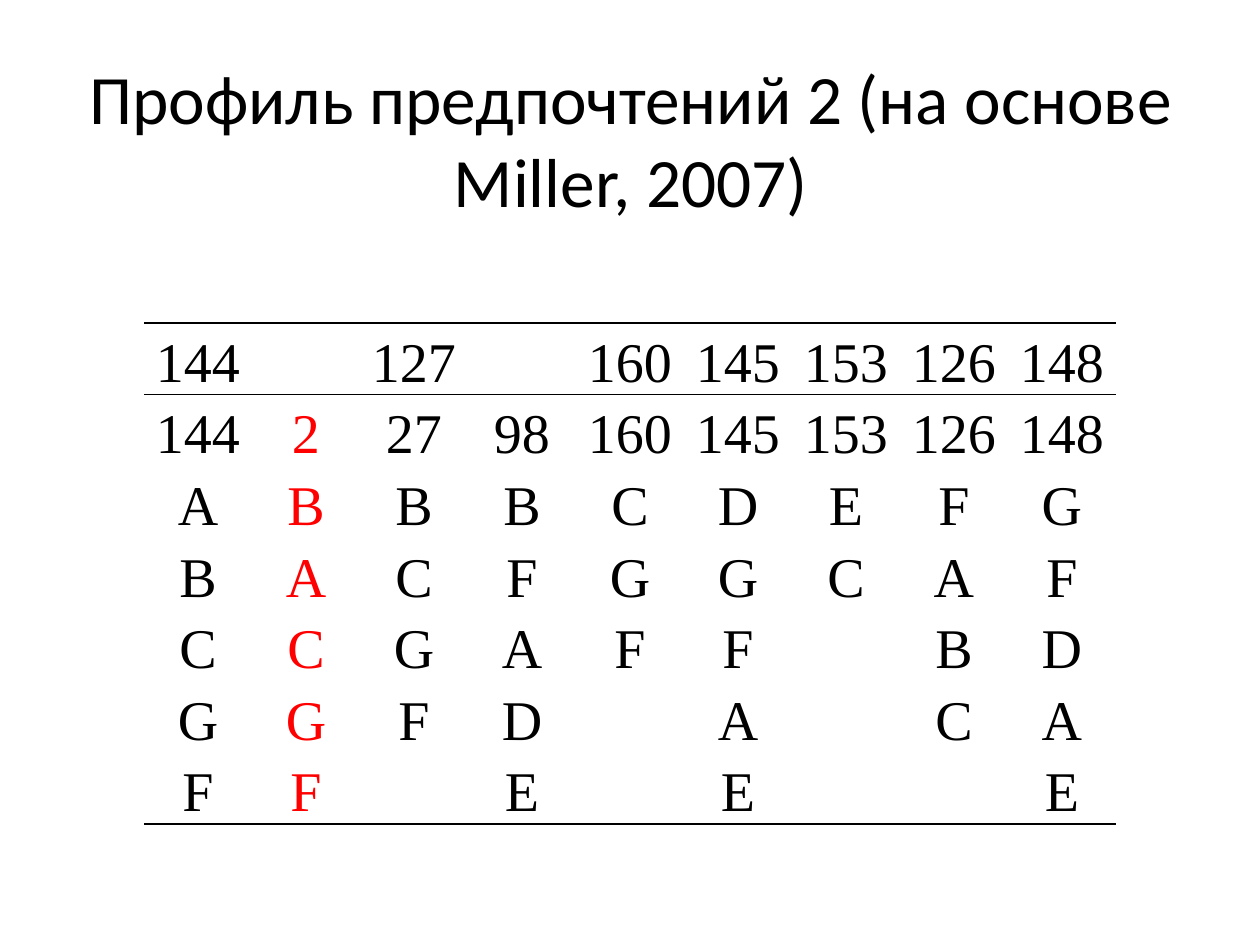
from lxml import etree
from pptx import Presentation, util as u
from pptx.dml.color import RGBColor
from pptx.enum import text
from pptx.oxml.ns import qn

TITLE = "Профиль предпочтений 2 (на основе Miller, 2007)"
GROUP_SIZES = ["144", "127", "", "", "160", "145", "153", "126", "148"]
PROFILES = [
    ("144", "ABCGF"),
    ("2", "BACGF"),
    ("27", "BCGF"),
    ("98", "BFADE"),
    ("160", "CGF"),
    ("145", "DGFAE"),
    ("153", "EC"),
    ("126", "FABC"),
    ("148", "GFDAE"),
]
MERGED = (1, 3)  # first and last column under the shared group size
HIGHLIGHT = 1
RULED_ROWS = {0: ("a:lnT", "a:lnB"), 1: ("a:lnT",), 6: ("a:lnB",)}
BORDERS = ("a:lnL", "a:lnR", "a:lnT", "a:lnB")
COLORS = {"ink": "000000", "accent": "FF0000"}

PX = u.Inches(1) // 126
TITLE_BOX = (64, 106, 1134, 157)
TABLE_LEFT, TABLE_TOP = 144, 323
COL_WIDTH, ROW_HEIGHT = 108, 71
CELL_MARGIN = 9


def add_span(para, words, font, size, color):
    span = para.add_run()
    span.text = words
    span.font.name = font
    span.font.size = u.Pt(size)
    span.font.color.rgb = RGBColor.from_string(COLORS[color])


def set_borders(cell, ruled):
    """Draw the ruled sides and clear the others, ahead of the cell's fill."""
    props = cell._tc.get_or_add_tcPr()
    for place, side in enumerate(BORDERS):
        line = etree.Element(qn(side), w=str(u.Pt(1)))
        if side in ruled:
            fill = etree.SubElement(line, qn("a:solidFill"))
            etree.SubElement(fill, qn("a:srgbClr"), val=COLORS["ink"])
        else:
            etree.SubElement(line, qn("a:noFill"))
        props.insert(place, line)


def add_title(page):
    title = page.shapes.title
    title.left, title.top, title.width, title.height = [n * PX for n in TITLE_BOX]
    frame = title.text_frame
    frame.word_wrap = True
    frame.auto_size = text.MSO_AUTO_SIZE.NONE
    frame.vertical_anchor = text.MSO_ANCHOR.MIDDLE
    para = frame.paragraphs[0]
    para.alignment = text.PP_ALIGN.CENTER
    add_span(para, TITLE, "Calibri", 39.6, "ink")
    para.add_line_break()


def fill_cell(cell, words, color):
    cell.fill.background()
    cell.margin_left = cell.margin_right = CELL_MARGIN * PX
    cell.margin_top = cell.margin_bottom = 0
    cell.vertical_anchor = text.MSO_ANCHOR.MIDDLE
    para = cell.text_frame.paragraphs[0]
    para.alignment = text.PP_ALIGN.CENTER
    para.line_spacing = 1.15
    if words:
        add_span(para, words, "Times New Roman", 32, color)


def add_profile_table(page):
    depth = max(len(order) for _, order in PROFILES)
    columns = [[size, voters, *order.ljust(depth)]
               for size, (voters, order) in zip(GROUP_SIZES, PROFILES)]
    rows = list(zip(*columns))
    table = page.shapes.add_table(
        len(rows), len(columns), TABLE_LEFT * PX, TABLE_TOP * PX,
        len(columns) * COL_WIDTH * PX, len(rows) * ROW_HEIGHT * PX).table
    table.first_row = table.horz_banding = False
    for column in table.columns:
        column.width = COL_WIDTH * PX
    for r, row in enumerate(rows):
        table.rows[r].height = ROW_HEIGHT * PX
        for c, words in enumerate(row):
            cell = table.cell(r, c)
            color = "accent" if c == HIGHLIGHT and r > 0 else "ink"
            fill_cell(cell, words.strip(), color)
            set_borders(cell, RULED_ROWS.get(r, ()))
    first, last = MERGED
    table.cell(0, first).merge(table.cell(0, last))


def main():
    deck = Presentation()
    deck.slide_width, deck.slide_height = u.Inches(10), u.Inches(7.5)
    page = deck.slides.add_slide(deck.slide_layouts[5])
    add_title(page)
    add_profile_table(page)
    deck.save("out.pptx")


if __name__ == "__main__":
    main()
